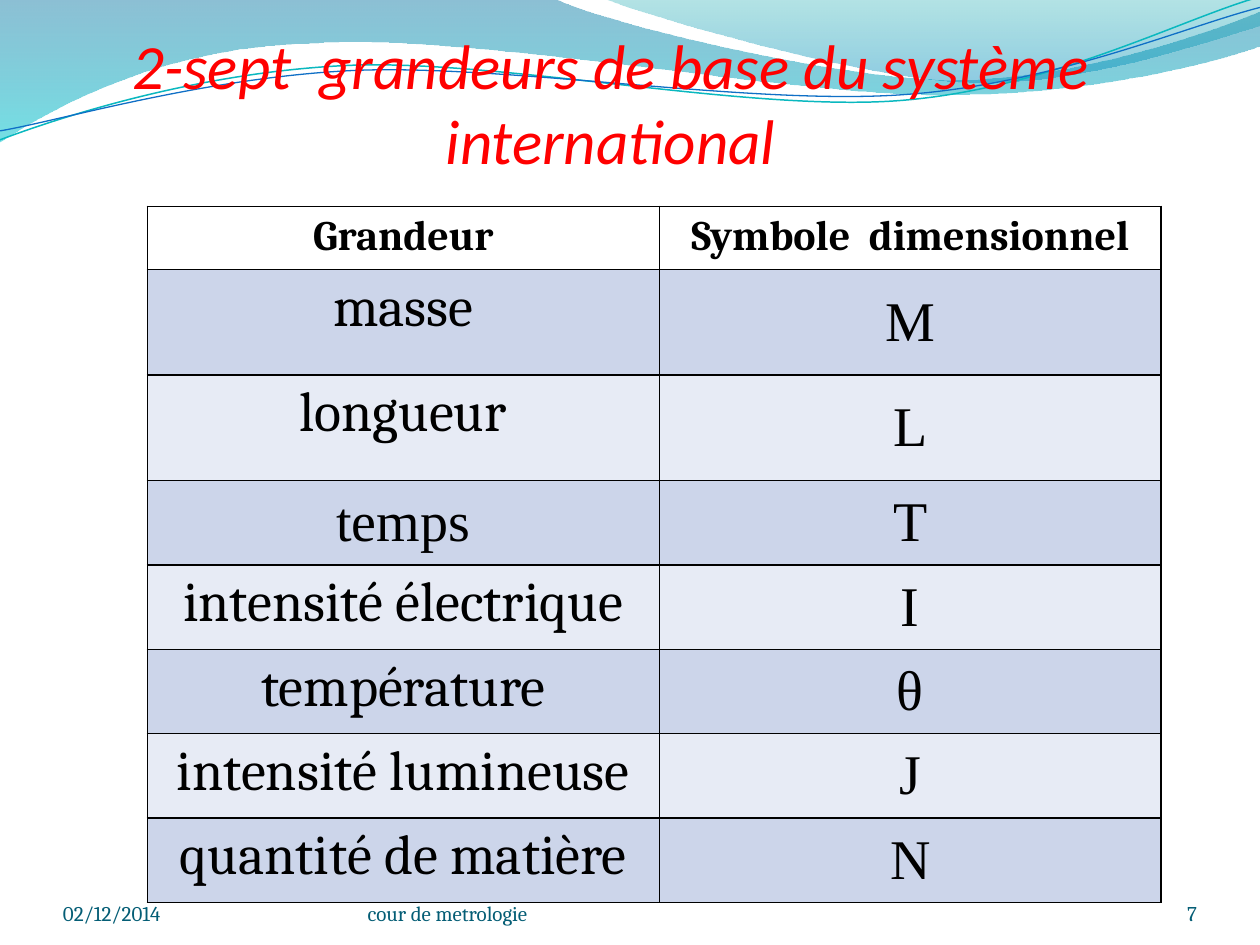
from math import cos, radians, sin

from lxml.etree import SubElement as Sub
from pptx import Presentation
from pptx.dml.color import RGBColor as Rgb
from pptx.enum.text import MSO_ANCHOR as Anchor, PP_ALIGN as Align
from pptx.oxml.ns import qn
from pptx.util import Cm, Pt

# Content
HEAD = ("Grandeur", "Symbole  dimensionnel")
UNITS = [
    ("masse", "M"),
    ("longueur", "L"),
    ("temps", "T"),
    ("intensité électrique", "I"),
    ("température", "θ"),
    ("intensité lumineuse", "J"),
    ("quantité de matière", "N"),
]
# text, box (left, top, width, height), style, align
TEXTS = [
    ("2-sept  grandeurs de base du système international",
     (0.59, 0, 23.44, 3.58), "title", Align.CENTER),
    ("02/12/2014", (1.27, 17.65, 5.92, 1.02), "foot", Align.LEFT),
    ("7", (22.02, 17.65, 2.11, 1.02), "foot", Align.RIGHT),
    ("cour de metrologie", (7.41, 17.65, 9.32, 1.02), "foot", Align.LEFT),
]

# Box and outline in cm: two numbers are a corner, six a Bezier curve
WAVES = [
    ((-0.03, -0.03, 25.45, 2.9),
     [(0, 0), (11.18, -0.03),
      (12.09, 0.43, 16.87, 1.6, 19.25, 1.6),
      (21.67, 1.6, 24.33, 0.66, 25.4, 0.23), (25.43, 0.91),
      (24.97, 1.12, 22.1, 1.93, 18.95, 1.91),
      (15.8, 1.91, 9.7, 0.71, 6.53, 0.86),
      (3.28, 0.91, 1.17, 2.11, -0.03, 2.87), (0, 0)],
     [("0074A1", 45), ("00C6CF", 55)]),
    ((12.17, -0.03, 13.23, 1.78),
     [(12.17, -0.03),
      (12.93, 0.28, 17.32, 1.57, 19.53, 1.65),
      (21.74, 1.75, 24.41, 0.81, 25.4, 0.53), (25.4, 0), (12.17, -0.03)],
     [("00A1A9", 30), ("008BBF", 45)]),
]
LINES = [
    ((-0.05, 0.56, 25.45, 1.8),
     [(0, 2.82),
      (1.22, 2.36, 4.01, 1.45, 7.04, 1.32),
      (10.03, 1.19, 15.06, 2.26, 18.11, 2.03),
      (21.16, 1.8, 23.83, 0.38, 25.35, -0.05)], "0AB8BF", 0.85),
    ((-0.05, 0.76, 25.48, 1.47),
     [(0, 2.64),
      (1.19, 2.44, 4.17, 1.55, 7.19, 1.42),
      (10.24, 1.3, 15.16, 2.13, 18.21, 1.91),
      (21.23, 1.7, 23.9, 0.53, 25.4, 0.15)], "0F6FC6", 0.75),
]
TILT = -2.7

THEME = {
    "title": dict(name="Calibri", size=36, color="FF0000", italic=True),
    "head": dict(name="Cambria", size=24, color="000000", bold=True),
    "word": dict(name="Cambria", size=32, color="000000", bold=False),
    "sign": dict(name="Times New Roman", size=32, color="000000", bold=False),
    "foot": dict(name="Cambria", size=12, color="045D75"),
    "top": "FFFFFF",
    "bands": ("CCD5EA", "E7EBF5"),
    "edge": "000000",
}
LEFT, TOP = 2.97, 4.16
COLS = (10.32, 10.12)
ROWS = [1.17] + [2.13] * 2 + [1.7] * 5


def write(frame, text, style, align):
    para = frame.paragraphs[0]
    para.alignment = align
    run = para.add_run()
    run.text = text
    for key, val in THEME[style].items():
        if key == "color":
            run.font.color.rgb = Rgb.from_string(val)
        else:
            setattr(run.font, key, Pt(val) if key == "size" else val)


def draw(slide, box, steps, close, tilt=0):
    """Draw a curved outline in its box, then tilt the box about its centre."""
    x, y, w, h = box
    a, b = cos(radians(tilt)), sin(radians(tilt))
    pen = slide.shapes.build_freeform(Cm(x), Cm(y))
    pen.add_line_segments([(Cm(x + w), Cm(y)), (Cm(x + w), Cm(y + h)),
                           (Cm(x), Cm(y + h))], close=close)
    shape = pen.convert_to_shape()
    shape.shadow.inherit = False
    shape.rotation = tilt % 360
    track = next(shape._element.iter(qn("a:path")))
    for node in list(track):
        track.remove(node)
    for i, step in enumerate(steps):
        tag = "cubicBezTo" if len(step) == 6 else "lnTo" if i else "moveTo"
        node = Sub(track, qn("a:" + tag))
        for px, py in zip(step[::2], step[1::2]):
            dx, dy = px - x - w / 2, py - y - h / 2
            Sub(node, qn("a:pt"), x=str(Cm(w / 2 + dx * a + dy * b)),
                y=str(Cm(h / 2 - dx * b + dy * a)))
    if close:
        Sub(track, qn("a:close"))
    return shape


def edge(cell):
    props = cell._tc.get_or_add_tcPr()
    for i, tag in enumerate(("a:lnL", "a:lnR", "a:lnT", "a:lnB")):
        line = props.makeelement(qn(tag), {"w": str(Pt(1))})
        fill = Sub(line, qn("a:solidFill"))
        Sub(fill, qn("a:srgbClr"), val=THEME["edge"])
        props.insert(i, line)


deck = Presentation()
deck.slide_width, deck.slide_height = Cm(25.4), Cm(19.05)
slide = deck.slides.add_slide(deck.slide_layouts[6])

# Waves along the top
for box, steps, stops in WAVES:
    wave = draw(slide, box, steps, True)
    wave.line.fill.background()
    wave.fill.gradient()
    wave.fill.gradient_angle = 270
    for stop, (hue, _) in zip(wave.fill.gradient_stops, stops):
        stop.color.rgb = Rgb.from_string(hue)
    for node, (_, alpha) in zip(wave._element.spPr.iter(qn("a:srgbClr")), stops):
        Sub(node, qn("a:alpha"), val=str(alpha * 1000))
for box, steps, hue, width in LINES:
    curve = draw(slide, box, steps, False, TILT)
    curve.fill.background()
    curve.line.color.rgb = Rgb.from_string(hue)
    curve.line.width = Pt(width)

# Title and footer
for text, box, style, align in TEXTS:
    frame = slide.shapes.add_textbox(*map(Cm, box)).text_frame
    form = dict(word_wrap=True, vertical_anchor=Anchor.BOTTOM, margin_left=0,
                margin_right=0, margin_bottom=0,
                margin_top=Cm(0.13) if style == "title" else 0)
    for key, val in form.items():
        setattr(frame, key, val)
    write(frame, text, style, align)

# Table of quantities
table = slide.shapes.add_table(
    len(ROWS), len(COLS), Cm(LEFT), Cm(TOP), Cm(sum(COLS)), Cm(sum(ROWS))).table
for col, width in zip(table.columns, COLS):
    col.width = Cm(width)
for row, high in zip(table.rows, ROWS):
    row.height = Cm(high)
for r, line in enumerate([HEAD] + UNITS):
    for c, text in enumerate(line):
        cell = table.cell(r, c)
        sign = r > 0 and (c == 1 or text == "temps")
        style = "head" if r == 0 else "sign" if sign else "word"
        if sign:
            form = dict(vertical_anchor=Anchor.MIDDLE, margin_left=Cm(0.18),
                        margin_right=Cm(0.18), margin_top=0, margin_bottom=0)
            for key, val in form.items():
                setattr(cell, key, val)
        write(cell.text_frame, text, style, Align.CENTER)
        cell.fill.solid()
        cell.fill.fore_color.rgb = Rgb.from_string(
            THEME["bands"][(r - 1) % 2] if r else THEME["top"])
        edge(cell)

deck.save("out.pptx")
